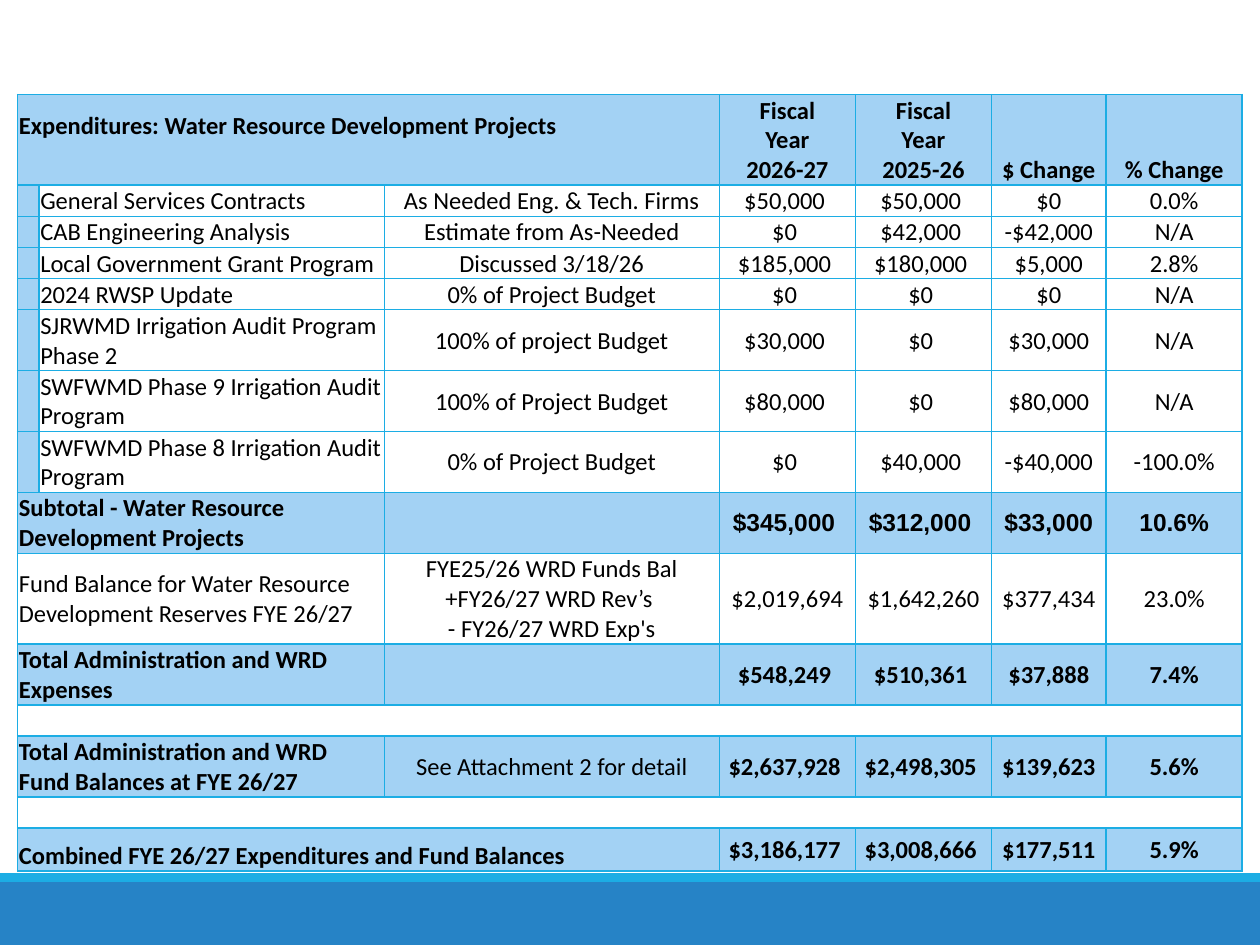
from lxml.etree import SubElement
from pptx import Presentation
from pptx.dml.color import RGBColor
from pptx.enum.shapes import MSO_SHAPE
from pptx.enum.text import MSO_ANCHOR, PP_ALIGN
from pptx.oxml.ns import qn
from pptx.util import Inches, Pt

WHITE = RGBColor(0xFF, 0xFF, 0xFF)
BLACK = RGBColor(0x00, 0x00, 0x00)
BAND = RGBColor(0xA3, 0xD2, 0xF4)
CYAN = RGBColor(0x1C, 0xAD, 0xE4)
BLUE = RGBColor(0x26, 0x83, 0xC6)

SLIDE_WIDTH, SLIDE_HEIGHT = 10, 7.5
FONT_SIZE = 14
LINE_HEIGHT, ROW_PADDING = 0.235, 0.01
COLUMN_WIDTHS = [0.17, 2.74, 2.66, 1.08, 1.08, 0.91, 1.08]

HEADER = ["Expenditures: Water Resource Development Projects", "", "",
          "Fiscal\nYear\n2026-27", "Fiscal\nYear\n2025-26", "$ Change", "% Change"]
PROJECTS = [
    (1, ["General Services Contracts", "As Needed Eng. & Tech. Firms",
         "$50,000 ", "$50,000 ", "$0", "0.0%"]),
    (1, ["CAB Engineering Analysis", "Estimate from As-Needed",
         "$0 ", "$42,000 ", "-$42,000", "N/A"]),
    (1, ["Local Government Grant Program", "Discussed 3/18/26",
         "$185,000 ", "$180,000 ", "$5,000", "2.8%"]),
    (1, ["2024 RWSP Update", "0% of Project Budget", "$0 ", "$0 ", "$0", "N/A"]),
    (2, ["SJRWMD Irrigation Audit Program Phase 2", "100% of project Budget",
         "$30,000 ", "$0 ", "$30,000", "N/A"]),
    (2, ["SWFWMD Phase 9 Irrigation Audit Program", "100% of Project Budget",
         "$80,000 ", "$0 ", "$80,000", "N/A"]),
    (2, ["SWFWMD Phase 8 Irrigation Audit Program", "0% of Project Budget",
         "$0 ", "$40,000 ", "-$40,000", "-100.0%"]),
]
SUBTOTAL = ["Subtotal - Water Resource Development Projects", "", "",
            "$345,000 ", "$312,000 ", "$33,000", "10.6%"]
RESERVES = ["Fund Balance for Water Resource Development Reserves FYE 26/27", "",
            "FYE25/26 WRD Funds Bal +FY26/27 WRD Rev’s \n- FY26/27 WRD Exp's",
            "$2,019,694", "$1,642,260", "$377,434", "23.0%"]
EXPENSES = ["Total Administration and WRD Expenses", "", "",
            "$548,249 ", "$510,361 ", "$37,888", "7.4%"]
BALANCES = ["Total Administration and WRD Fund Balances at FYE 26/27", "",
            "See Attachment 2 for detail",
            "$2,637,928 ", "$2,498,305 ", "$139,623", "5.6%"]
COMBINED = ["Combined FYE 26/27 Expenditures and Fund Balances", "", "",
            "$3,186,177 ", "$3,008,666 ", "$177,511", "5.9%"]
SPACER = [""] * len(COLUMN_WIDTHS)

# Each row: lines of text, merged leading columns, fill, bold, texts
ROWS = [
    (3, 3, BAND, True, HEADER),
    *[(lines, 1, WHITE, False, ["", *texts]) for lines, texts in PROJECTS],
    (2, 2, BAND, True, SUBTOTAL),
    (3, 2, WHITE, False, RESERVES),
    (2, 2, BAND, True, EXPENSES),
    (1, 7, WHITE, False, SPACER),
    (2, 2, BAND, True, BALANCES),
    (1, 7, WHITE, False, SPACER),
    (1.4, 3, BAND, True, COMBINED),
]


def draw_borders(cell):
    properties = cell._tc.get_or_add_tcPr()
    for side in ("a:lnL", "a:lnR", "a:lnT", "a:lnB"):
        line = SubElement(properties, qn(side), w=str(Pt(1)))
        fill = SubElement(line, qn("a:solidFill"))
        SubElement(fill, qn("a:srgbClr"), val=str(CYAN))


def fill_cell(cell, text, color, bold, alignment, font_name="Calibri"):
    draw_borders(cell)
    cell.fill.solid()
    cell.fill.fore_color.rgb = color
    cell.margin_left = cell.margin_right = cell.margin_top = Inches(0.01)
    cell.margin_bottom = 0
    cell.vertical_anchor = MSO_ANCHOR.MIDDLE
    cell.text_frame.text = text
    for paragraph in cell.text_frame.paragraphs:
        paragraph.alignment = alignment
        for run in paragraph.runs:
            run.font.name = font_name
            run.font.size = Pt(FONT_SIZE)
            run.font.bold = bold
            run.font.color.rgb = BLACK
        if not paragraph.runs:
            SubElement(paragraph._p, qn("a:endParaRPr"), sz=str(FONT_SIZE * 100))


def add_budget_table(slide, left, top):
    heights = [row[0] * LINE_HEIGHT + ROW_PADDING for row in ROWS]
    table = slide.shapes.add_table(
        len(ROWS), len(COLUMN_WIDTHS), Inches(left), Inches(top),
        Inches(sum(COLUMN_WIDTHS)), Inches(sum(heights))).table
    table.first_row = table.horz_banding = False
    for column, width in zip(table.columns, COLUMN_WIDTHS):
        column.width = Inches(width)
    for index, (lines, span, color, bold, texts) in enumerate(ROWS):
        table.rows[index].height = Inches(heights[index])
        label_column = 1 if span == 1 else 0
        for position, text in enumerate(texts):
            is_label = position == label_column
            is_marker = span == 1 and position == 0
            fill_cell(table.cell(index, position), text,
                      BAND if is_marker else color,
                      bold and (is_label or position != 2),
                      PP_ALIGN.LEFT if is_label else PP_ALIGN.CENTER,
                      "Arial" if texts is SUBTOTAL and position > 2 else "Calibri")
        if span > 1:
            table.cell(index, 0).merge(table.cell(index, span - 1))
    table.cell(0, 0).margin_bottom = Inches(LINE_HEIGHT)
    for row, column in ((0, 5), (0, 6), (len(ROWS) - 1, 0)):
        table.cell(row, column).vertical_anchor = MSO_ANCHOR.BOTTOM


def add_footer(slide, top, height):
    stripe = 0.07
    for y, band_height, color in ((top + stripe, height - stripe, BLUE),
                                  (top, stripe, CYAN)):
        band = slide.shapes.add_shape(MSO_SHAPE.RECTANGLE, 0, Inches(y),
                                      Inches(SLIDE_WIDTH), Inches(band_height))
        band.shadow.inherit = False
        band.fill.solid()
        band.fill.fore_color.rgb = color
        band.line.fill.background()


def main():
    presentation = Presentation()
    presentation.slide_width = Inches(SLIDE_WIDTH)
    presentation.slide_height = Inches(SLIDE_HEIGHT)
    slide = presentation.slides.add_slide(presentation.slide_layouts[6])
    add_footer(slide, 6.93, SLIDE_HEIGHT - 6.93)
    add_budget_table(slide, (SLIDE_WIDTH - sum(COLUMN_WIDTHS)) / 2, SLIDE_HEIGHT / 10)
    presentation.save("out.pptx")


if __name__ == "__main__":
    main()
